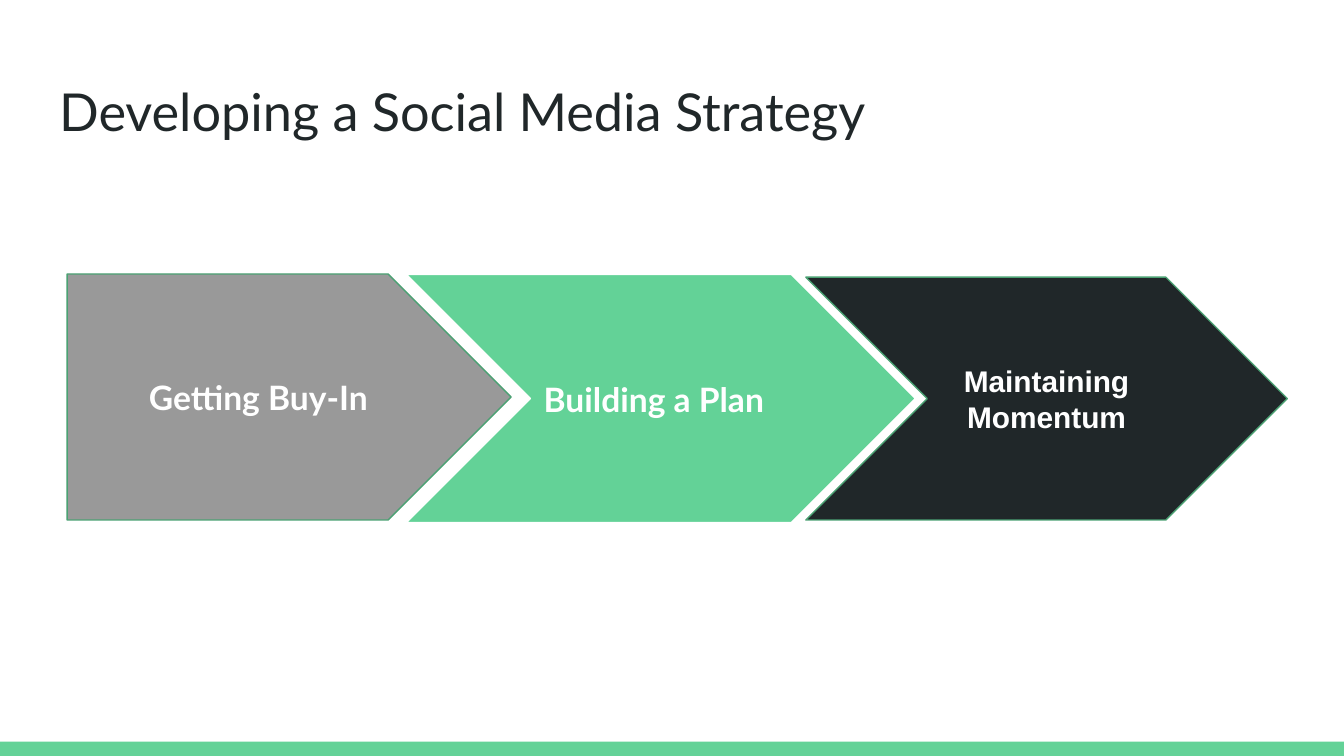
from pptx import Presentation
from pptx import util as u
from pptx.dml.color import RGBColor
from pptx.enum import shapes, text

COLORS = {
    "ink": "202729",
    "green": "63D297",
    "edge": "4BA173",
    "gray": "999999",
    "white": "FFFFFF",
}
PLATE, CHEVRON = shapes.MSO_SHAPE.PENTAGON, shapes.MSO_SHAPE.CHEVRON
CENTER, LEFT = text.PP_ALIGN.CENTER, text.PP_ALIGN.LEFT

# Content: label, outline, box in cm, fill, line, text format
TITLE = "Developing a Social Media Strategy"
STAGES = [
    ("Getting Buy-In", PLATE, (1.27, 5.18, 8.39, 4.65), "gray", "edge",
     dict(size=18, align=CENTER)),
    ("Building a Plan", CHEVRON, (7.68, 5.19, 9.62, 4.69), "green", "white",
     dict(size=18, align=LEFT)),
    ("Maintaining Momentum", CHEVRON, (15.23, 5.24, 9.1, 4.59), "ink", "edge",
     dict(size=16, align=CENTER, font="Arial")),
]
WIDTH, HEIGHT, FOOTER = 25.4, 14.29, 0.27


def rgb(name):
    return RGBColor.from_string(COLORS[name])


def write(shape, words, size, color="white", font="Lato", bold=True,
          align=LEFT, anchor=text.MSO_ANCHOR.MIDDLE):
    frame = shape.text_frame
    frame.word_wrap = True
    frame.vertical_anchor = anchor
    frame.margin_left = frame.margin_right = u.Cm(0.25)
    frame.margin_top = frame.margin_bottom = u.Cm(0.25)
    paragraph = frame.paragraphs[0]
    paragraph.alignment = align
    run = paragraph.add_run()
    run.text = words
    run.font.name = font
    run.font.size = u.Pt(size)
    run.font.bold = bold
    run.font.color.rgb = rgb(color)


def block(slide, outline, box, fill, line=None):
    shape = slide.shapes.add_shape(outline, *map(u.Cm, box))
    shape.shadow.inherit = False
    shape.fill.solid()
    shape.fill.fore_color.rgb = rgb(fill)
    if line:
        shape.line.color.rgb = rgb(line)
        shape.line.width = u.Pt(0.75)
    else:
        shape.line.fill.background()
    return shape


def main():
    deck = Presentation()
    deck.slide_width, deck.slide_height = u.Cm(WIDTH), u.Cm(HEIGHT)
    slide = deck.slides.add_slide(deck.slide_layouts[6])

    # Footer band
    block(slide, shapes.MSO_SHAPE.RECTANGLE,
          (0, HEIGHT - FOOTER, WIDTH, FOOTER), "green")

    # Title
    title = slide.shapes.add_textbox(*map(u.Cm, (0.87, 1.24, 23.67, 1.6)))
    write(title, TITLE, 28, color="ink", bold=False,
          anchor=text.MSO_ANCHOR.TOP)

    # Stage arrows
    for label, outline, box, fill, line, style in STAGES:
        stage = block(slide, outline, box, fill, line)
        stage.adjustments[0] = 0.5
        write(stage, label, **style)

    deck.save("out.pptx")


if __name__ == "__main__":
    main()
